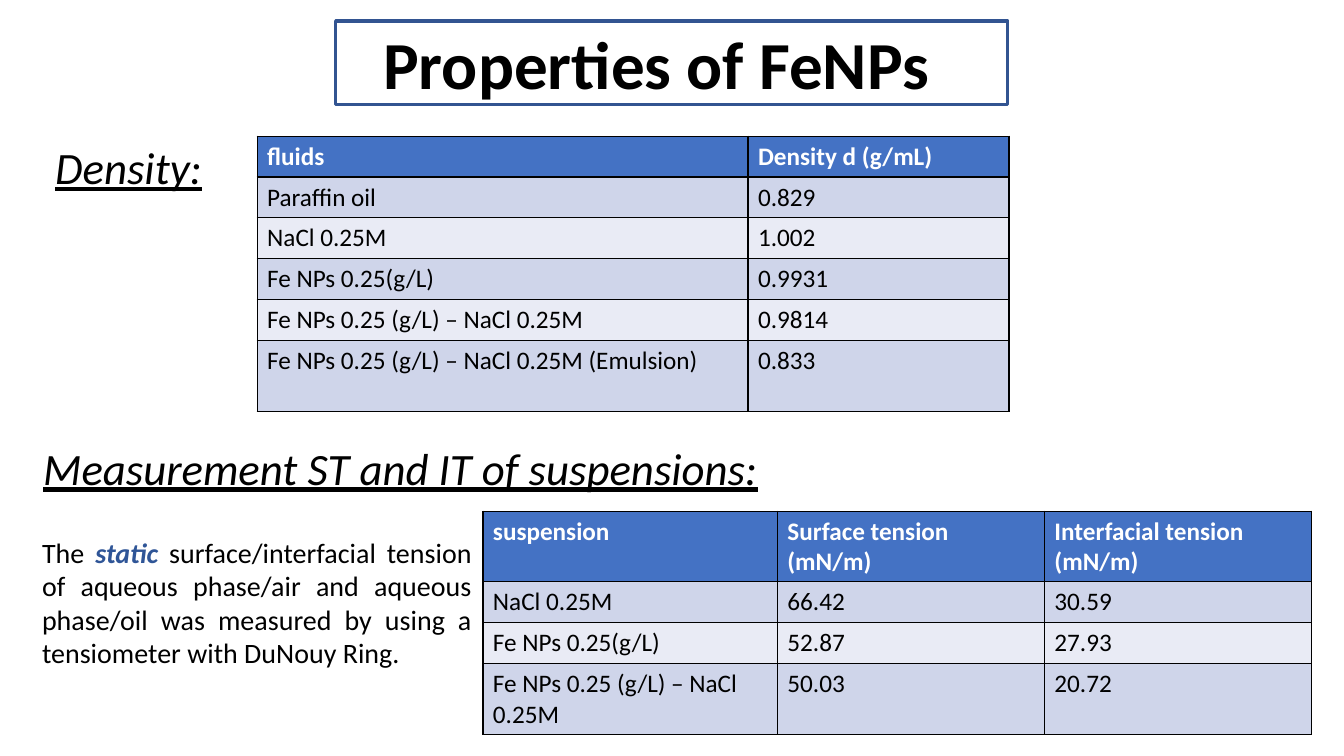
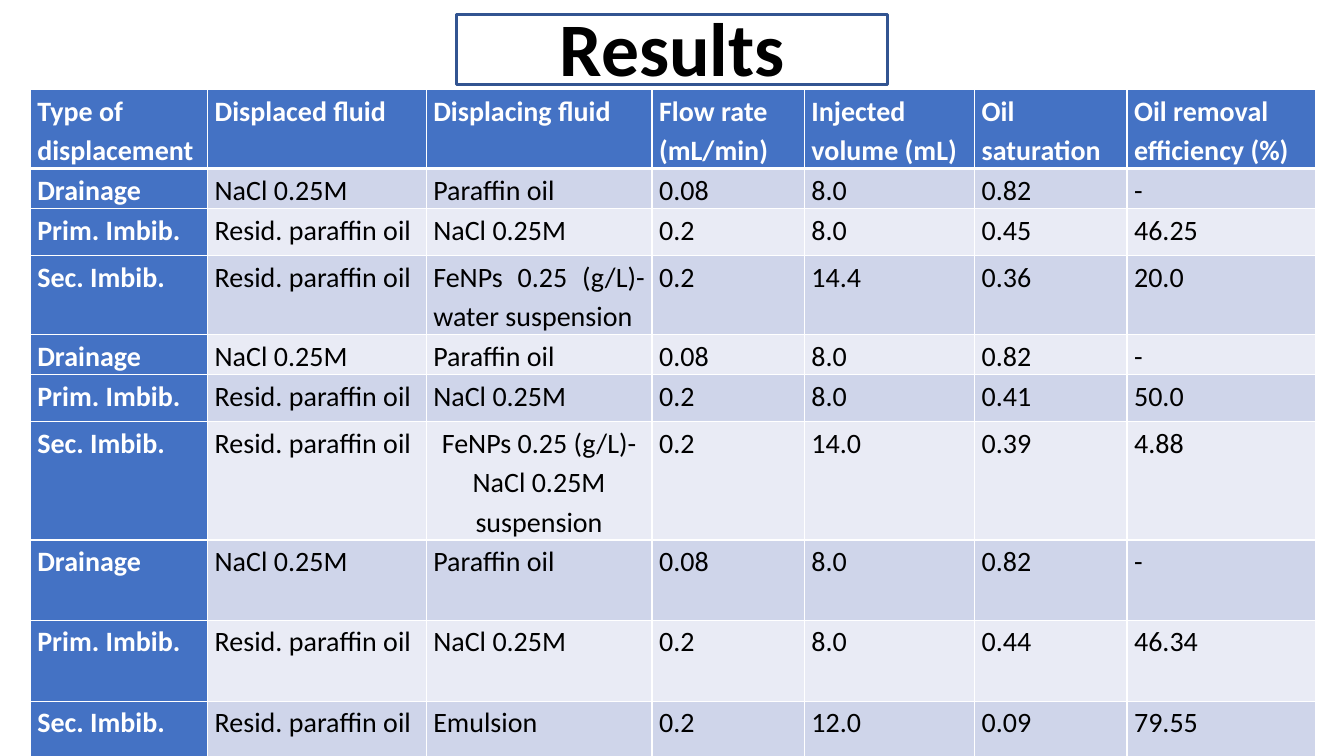
from lxml.etree import SubElement as Sub
from pptx import Presentation
from pptx.dml.color import RGBColor
from pptx.enum.shapes import MSO_SHAPE as Shape
from pptx.enum.text import MSO_ANCHOR as Anchor, PP_ALIGN as Align
from pptx.oxml.ns import qn
from pptx.util import Cm, Pt

FONT = "Calibri"
BLACK, WHITE, BLUE = "000000", "FFFFFF", "4472C4"
FRAME, ACCENT = "325491", "2F5597"
BANDS = ["E9EBF5", "CFD5EA"]
hue = RGBColor.from_string


def ink(para, size, color=BLACK, bold=False, slant=False, under=False):
    for run in para.runs:
        font = run.font
        font.name, font.size = FONT, Pt(size)
        font.color.rgb = hue(color)
        font.bold, font.italic, font.underline = bold, slant, under


def grid(slide, left, top, cols, rows, data, size, edge, rule=1, side=False):
    table = slide.shapes.add_table(
        len(rows), len(cols), Cm(left), Cm(top), Cm(sum(cols)), Cm(sum(rows))
    ).table
    for col, width in zip(table.columns, cols):
        col.width = Cm(width)
    for r, (line, height) in enumerate(zip(data, rows)):
        table.rows[r].height = Cm(height)
        for c, text in enumerate(line):
            cell = table.cell(r, c)
            head = r == 0 or (side and c == 0)
            cell.text_frame.text = text
            ink(cell.text_frame.paragraphs[0], size, WHITE if head else BLACK, head)
            props = cell._tc.get_or_add_tcPr()
            for name in ("lnL", "lnR", "lnT", "lnB"):
                thick = (r, name) in ((0, "lnB"), (1, "lnT"))
                ln = Sub(props, qn("a:" + name), w=str(Pt(rule if thick else 1)))
                Sub(Sub(ln, qn("a:solidFill")), qn("a:srgbClr"), val=edge)
            cell.fill.solid()
            cell.fill.fore_color.rgb = hue(BLUE if head else BANDS[r % 2])
    return table


deck = Presentation()
deck.slide_width, deck.slide_height = Cm(33.87), Cm(19.05)

heads = [
    ("Properties of FeNPs", 48, (3.84, 0.64, 25.4, 2.11), (8.46, 0.53, 16.94, 2.11)),
    ("Results", 54, (4.24, 0.03, 25.4, 2.44), (11.51, 0.36, 10.85, 1.78)),
]
for text, size, spot, box in heads:
    slide = deck.slides.add_slide(deck.slide_layouts[5])
    title = slide.shapes.title
    title.left, title.top, title.width, title.height = map(Cm, spot)
    frame = title.text_frame
    frame.text = text
    frame.word_wrap = True
    frame.vertical_anchor = Anchor.BOTTOM
    para = frame.paragraphs[0]
    para.alignment, para.line_spacing = Align.CENTER, 0.9
    ink(para, size, bold=True)
    rect = slide.shapes.add_shape(Shape.RECTANGLE, *map(Cm, box))
    rect.shadow.inherit = False
    rect.fill.background()
    rect.line.color.rgb = hue(FRAME)
    rect.line.width = Pt(2.25)

props, results = deck.slides

labels = [
    ("Density:", 1.14, 3.4, 5),
    ("Measurement ST and IT of suspensions:", 0.84, 10.97, 18.95),
]
for text, left, top, width in labels:
    frame = props.shapes.add_textbox(Cm(left), Cm(top), Cm(width), Cm(1.62)).text_frame
    frame.word_wrap = True
    frame.text = text
    ink(frame.paragraphs[0], 32, slant=True, under=True)

frame = props.shapes.add_textbox(Cm(0.81), Cm(13.36), Cm(11.33), Cm(3.68)).text_frame
frame.word_wrap = True
para = frame.paragraphs[0]
para.alignment = Align.JUSTIFY
for text in (
    "The ",
    "static ",
    "surface/interfacial tension of aqueous phase/air and aqueous phase/oil "
    "was measured by using a tensiometer with DuNouy Ring.",
):
    para.add_run().text = text
ink(para, 20)
word = para.runs[1].font
word.bold = word.italic = True
word.color.rgb = hue(ACCENT)

density = [
    ("fluids", "Density d (g/mL)"),
    ("Paraffin oil", "0.829"),
    ("NaCl 0.25M", "1.002"),
    ("Fe NPs 0.25(g/L)", "0.9931"),
    ("Fe NPs 0.25 (g/L) – NaCl 0.25M", "0.9814"),
    ("Fe NPs 0.25 (g/L) – NaCl 0.25M (Emulsion)", "0.833"),
]
grid(props, 6.48, 3.43, [12.37, 6.58], [1.03] * 5 + [1.79], density, 18, BLACK)

tension = [
    ("suspension", "Surface tension (mN/m)", "Interfacial tension (mN/m)"),
    ("NaCl 0.25M", "66.42", "30.59"),
    ("Fe NPs 0.25(g/L)", "52.87", "27.93"),
    ("Fe NPs 0.25 (g/L) – NaCl 0.25M", "50.03", "20.72"),
]
grid(props, 12.17, 12.88, [7.42, 6.73, 6.73], [1.78, 1.03, 1.03, 1.78],
     tension, 18, BLACK)

brine, oil, resid = "NaCl 0.25M", "Paraffin oil", "Resid. paraffin oil"
drain = ("Drainage", brine, oil, "0.08", "8.0", "0.82", "-")
cycles = [
    ("0.45", "46.25", "FeNPs 0.25 (g/L)-water suspension", "14.4", "0.36", "20.0"),
    ("0.41", "50.0", "FeNPs 0.25 (g/L)-NaCl 0.25M suspension", "14.0", "0.39", "4.88"),
    ("0.44", "46.34", "Emulsion", "12.0", "0.09", "79.55"),
]
data = [(
    "Type of displacement", "Displaced fluid", "Displacing fluid",
    "Flow rate (mL/min)", "Injected volume (mL)", "Oil saturation",
    "Oil removal efficiency (%)",
)]
for first, gain, fluid, *last in cycles:
    data += [
        drain,
        ("Prim. Imbib.", resid, brine, "0.2", "8.0", first, gain),
        ("Sec. Imbib.", resid, fluid, "0.2", *last),
    ]
cols = [4.47, 5.51, 5.69, 3.84, 4.29, 3.84, 4.75]
rows = [1.98, 1, 1.19, 2, 1, 1.19, 2.98, 2.02, 2.04, 1.39]
table = grid(results, 0.76, 2.26, cols, rows, data, 20, WHITE, 3, True)
for r, row in enumerate(table.rows):
    for cell in row.cells:
        cell.margin_left = cell.margin_right = Cm(0.18)
        cell.margin_top = cell.margin_bottom = 0
        para = cell.text_frame.paragraphs[0]
        para.line_spacing, para.space_after = 1.15, Pt(1)
        para.alignment = Align.JUSTIFY if r else Align.LEFT
table.cell(6, 2).text_frame.paragraphs[0].alignment = Align.CENTER

deck.save("out.pptx")
